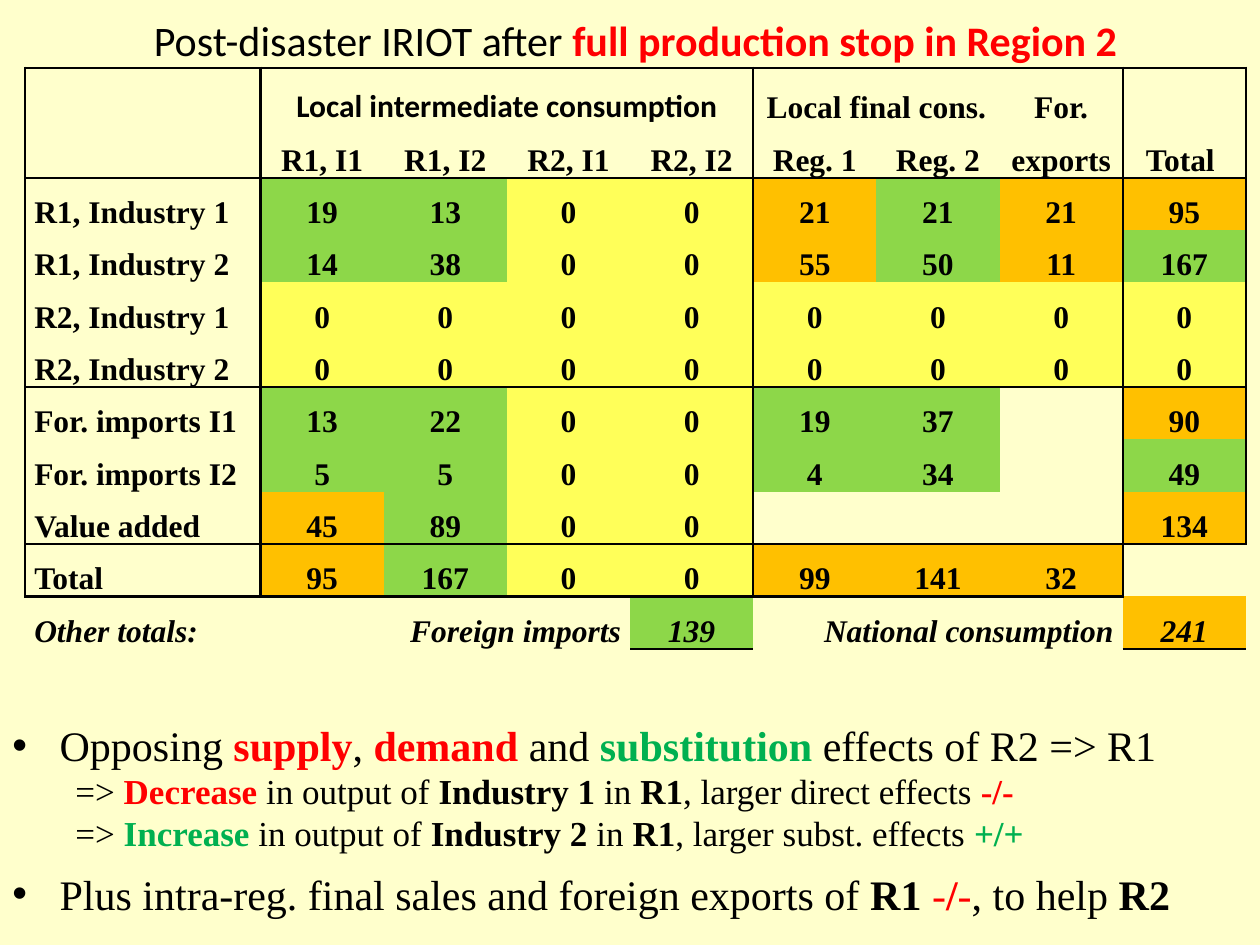
from lxml import etree
from pptx import Presentation
from pptx import util as u
from pptx.dml.color import RGBColor
from pptx.enum import text
from pptx.oxml import ns

Pt = u.Pt
BLACK = RGBColor(0, 0, 0)
RED = RGBColor(0xFF, 0, 0)
GREEN = RGBColor(0, 0xB0, 0x50)
CREAM = RGBColor(0xFF, 0xFF, 0xCC)
LIME = RGBColor(0x8D, 0xD7, 0x49)
LEMON = RGBColor(0xFF, 0xFF, 0x59)
AMBER = RGBColor(0xFF, 0xC0, 0)
SERIF, SANS = "Times New Roman", "Calibri"
LEFT, MID, RIGHT = text.PP_ALIGN.LEFT, text.PP_ALIGN.CENTER, text.PP_ALIGN.RIGHT


def write(para, parts, size, face, slant=False):
    for words, tint, bold in parts:
        run = para.add_run()
        run.text = words
        look = {"size": Pt(size), "name": face, "bold": bold, "italic": slant}
        for key, val in look.items():
            setattr(run.font, key, val)
        run.font.color.rgb = tint


def edge(cell, side, shown):
    line = etree.SubElement(cell._tc.get_or_add_tcPr(), ns.qn("a:ln" + side))
    if shown:
        line.set("w", str(Pt(1.5)))
        fill = etree.SubElement(line, ns.qn("a:solidFill"))
        etree.SubElement(fill, ns.qn("a:srgbClr")).set("val", str(BLACK))
    else:
        line.set("w", "0")
        etree.SubElement(line, ns.qn("a:noFill"))


prs = Presentation()
prs.slide_width, prs.slide_height = Pt(720), Pt(540)
slide = prs.slides.add_slide(prs.slide_layouts[6])
slide.background.fill.solid()
slide.background.fill.fore_color.rgb = CREAM

rows = [
    ["", "", "", "", "", "", "", "", ""],
    ["", "Local intermediate consumption", "", "", "", "Local final cons.", "",
     "For. exports", "Total "],
    ["", "R1, I1", "R1, I2", "R2, I1", "R2, I2", "Reg. 1", "Reg. 2", "", ""],
    ["R1, Industry 1", 19, 13, 0, 0, 21, 21, 21, 95],
    ["R1, Industry 2", 14, 38, 0, 0, 55, 50, 11, 167],
    ["R2, Industry 1", 0, 0, 0, 0, 0, 0, 0, 0],
    ["R2, Industry 2", 0, 0, 0, 0, 0, 0, 0, 0],
    ["For. imports I1", 13, 22, 0, 0, 19, 37, "", 90],
    ["For. imports I2", 5, 5, 0, 0, 4, 34, "", 49],
    ["Value added", 45, 89, 0, 0, "", "", "", 134],
    ["Total", 95, 167, 0, 0, 99, 141, 32, ""],
    ["Other totals:", "Foreign imports", "", "", 139, "National consumption", "", "", 241],
]
tints = {"g": LIME, "y": LEMON, "o": AMBER}
codes = ["." * 9] * 3 + [
    ".ggyyogoo", ".ggyyogog", ".yyyyyyyy", ".yyyyyyyy", ".ggyygg.o",
    ".ggyygg.g", ".ogyy...o", ".ogyyooo.", "....g...o",
]
spans = [(0, 0, 0, 8), (1, 0, 2, 0), (1, 1, 1, 4), (1, 5, 1, 6), (1, 7, 2, 7),
         (1, 8, 2, 8), (11, 1, 11, 3), (11, 5, 11, 7)]

frame = slide.shapes.add_table(12, 9, Pt(14.4), Pt(9.4), Pt(697.7), Pt(385.2))
table = frame.table
table.first_row = table.horz_banding = False
style = table._tbl.tblPr.find(ns.qn("a:tableStyleId"))
style.text = "{2D5ABB26-0587-4C30-8999-92F81FD0307C}"
for c, col in enumerate(table.columns):
    col.width = Pt(70.4 if c else 134.5)
for r, row in enumerate(table.rows):
    row.height = Pt({0: 24.5, 2: 27.4}.get(r, 25.2))
frame.height = Pt(385.2)
for top, left, end, last in spans:
    table.cell(top, left).merge(table.cell(end, last))

for r, row in enumerate(rows):
    for c, value in enumerate(row):
        cell = table.cell(r, c)
        low, far = r + 1, c + 1
        if cell.is_merge_origin:
            low, far = r + cell.span_height, c + cell.span_width
        for side, x in (("L", c), ("R", far)):
            edge(cell, side, 1 <= r <= 10 and x in (0, 1, 5, 8) or 1 <= r <= 9 and x == 9)
        for side, y in (("T", r), ("B", low)):
            edge(cell, side, y in (1, 3, 7, 10) or y == 11 and c < 8
                 or y == 12 and c in (4, 8))
        look = {"margin_left": Pt(5.2), "margin_right": Pt(5.2), "margin_top": 0,
                "margin_bottom": 0, "vertical_anchor": text.MSO_ANCHOR.BOTTOM}
        for key, val in look.items():
            setattr(cell, key, val)
        if codes[r][c] in tints:
            cell.fill.solid()
            cell.fill.fore_color.rgb = tints[codes[r][c]]
        else:
            cell.fill.background()
        if value != "":
            para = cell.text_frame.paragraphs[0]
            para.line_spacing = 1.5
            para.alignment = LEFT if c == 0 else RIGHT if r == 11 and c in (1, 5) else MID
            face = SANS if (r, c) == (1, 1) else SERIF
            write(para, [(str(value), BLACK, True)], 18, face, r == 11)

title = table.cell(0, 0).text_frame.paragraphs[0]
title.alignment = MID
write(title, [("Post-disaster IRIOT after ", BLACK, False),
              ("full production stop in Region 2", RED, True)], 24, SANS)

effects = [
    (24, [("Opposing ", BLACK, False), ("supply", RED, True), (", ", BLACK, False),
          ("demand ", RED, True), ("and ", BLACK, False), ("substitution ", GREEN, True),
          ("effects of R2 => R1", BLACK, False)]),
]
for verb, tint, sector, size, sign in (
        ("Decrease ", RED, "Industry 1", "direct", "-/-"),
        ("Increase ", GREEN, "Industry 2", "subst.", "+/+")):
    effects.append((20, [
        ("=> ", BLACK, False), (verb, tint, True), ("in output of ", BLACK, False),
        (sector, BLACK, True), (" in ", BLACK, False), ("R1", BLACK, True),
        (f", larger {size} effects ", BLACK, False), (sign, tint, True)]))
sales = [
    (24, [("Plus intra-reg. final sales and foreign exports of ", BLACK, False),
          ("R1 ", BLACK, True), ("-", RED, False), ("/", RED, True), ("-", RED, False),
          (", to help ", BLACK, False), ("R2", BLACK, True)]),
]

for top, high, lines in ((407.5, 85), (492.5, 36)) and (
        (407.5, 85, effects), (492.5, 36, sales)):
    body = slide.shapes.add_textbox(0, Pt(top), Pt(720), Pt(high)).text_frame
    body.word_wrap = True
    body.auto_size = text.MSO_AUTO_SIZE.SHAPE_TO_FIT_TEXT
    for n, (size, parts) in enumerate(lines):
        para = body.add_paragraph() if n else body.paragraphs[0]
        props = para._p.get_or_add_pPr()
        first = size == 24
        props.set("marL", str(Pt(27 if first else 36)))
        props.set("indent", str(Pt(-27 if first else 0)))
        if first:
            etree.SubElement(props, ns.qn("a:buFont")).set("typeface", "Arial")
            etree.SubElement(props, ns.qn("a:buChar")).set("char", "•")
        write(para, parts, size, SERIF)

prs.save("out.pptx")
